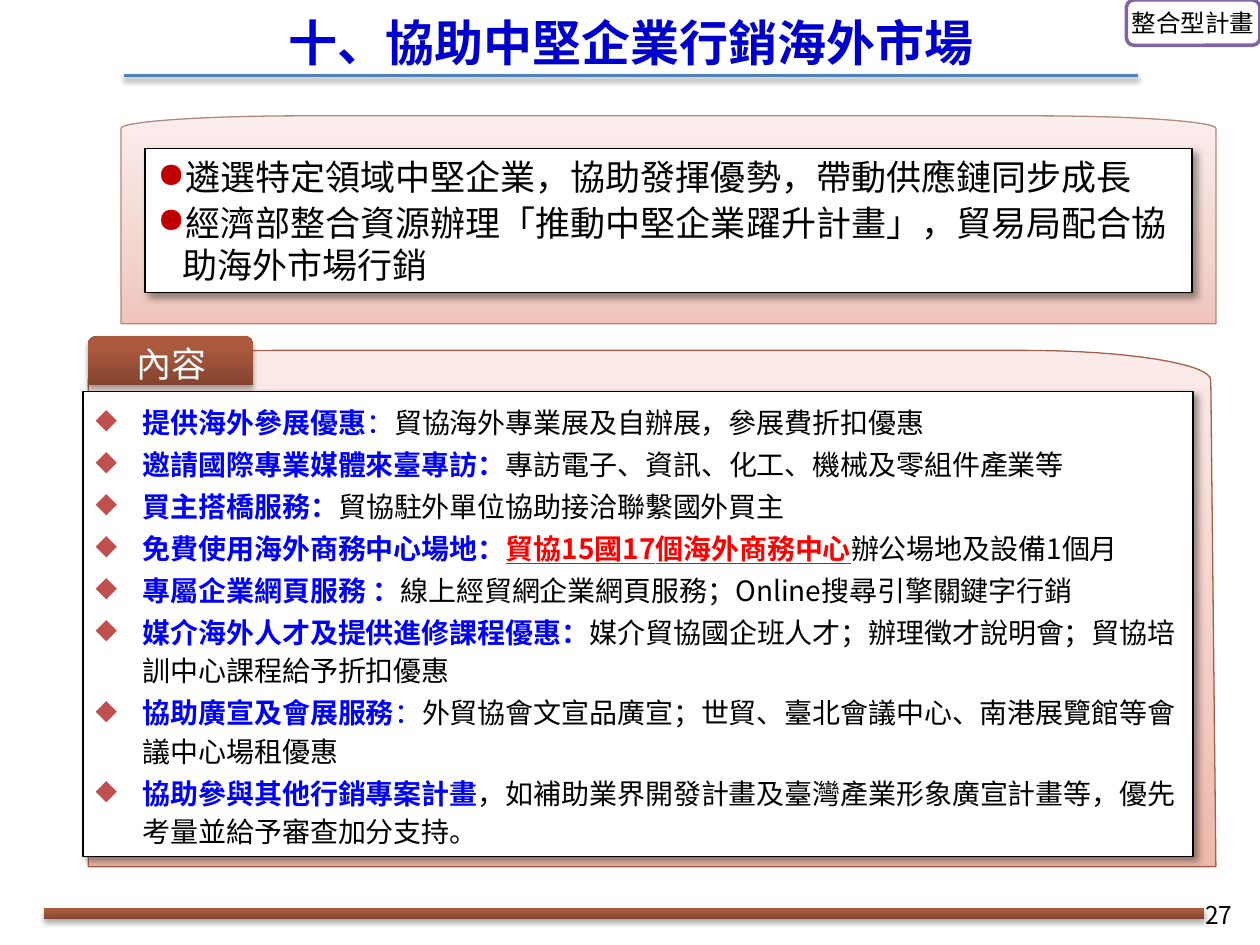
from typing import NamedTuple, Optional

from lxml.etree import SubElement
from pptx import Presentation
from pptx.dml.color import RGBColor
from pptx.enum.shapes import MSO_CONNECTOR, MSO_SHAPE
from pptx.enum.text import MSO_ANCHOR, PP_ALIGN
from pptx.oxml.ns import qn
from pptx.util import Pt

FONT = "Noto Sans CJK SC"
BLACK = RGBColor(0x00, 0x00, 0x00)
WHITE = RGBColor(0xFF, 0xFF, 0xFF)
BLUE = RGBColor(0x00, 0x00, 0xFF)
TITLE_BLUE = RGBColor(0x00, 0x00, 0xCC)
RULE_BLUE = RGBColor(0x4F, 0x81, 0xBD)
RED = RGBColor(0xFF, 0x00, 0x00)
DOT_RED = RGBColor(0xC0, 0x00, 0x00)
DIAMOND_RED = RGBColor(0xC0, 0x50, 0x4D)
PURPLE = RGBColor(0x80, 0x64, 0xA2)
CONTENT_EDGE = RGBColor(0xA3, 0x61, 0x4A)
SUMMARY_EDGE = RGBColor(0xB2, 0x87, 0x7C)

CONTENT_GRADIENT = ((0, "EEB8AC"), (35, "F2CDC5"), (100, "FBEBE8"))
SUMMARY_GRADIENT = ((0, "EFC5BB"), (35, "F3D5CF"), (100, "FBEEEC"))
TAB_GRADIENT = ((0, "83432E"), (80, "AC5A3F"), (100, "AF5A3D"))
BAR_GRADIENT = ((0, "854630"), (80, "AD5B3F"), (100, "AF5A3D"))


class Box(NamedTuple):
    left: float
    top: float
    width: float
    height: float

    def lengths(self) -> list:
        return [Pt(value) for value in self]


class Shadow(NamedTuple):
    opacity: int
    blur: float
    distance: float
    angle: int


class TextRun(NamedTuple):
    text: str
    color: RGBColor = BLACK
    bold: bool = False
    underline: bool = False


class ListStyle(NamedTuple):
    bullet: str
    bullet_color: RGBColor
    indent: float
    size: float
    line_spacing: Optional[float] = None


SOFT_SHADOW = Shadow(35, 3.1, 1.8, 90)
CARD_SHADOW = Shadow(40, 4, 3, 45)
SUMMARY_STYLE = ListStyle("●", DOT_RED, 14.4, 20)
CONTENT_STYLE = ListStyle("◆", DIAMOND_RED, 27, 16, 22)


def heading(text: str) -> TextRun:
    return TextRun(text, BLUE, bold=True)


SUMMARY = [
    [TextRun("遴選特定領域中堅企業，協助發揮優勢，帶動供應鏈同步成長")],
    [TextRun("經濟部整合資源辦理「推動中堅企業躍升計畫」，貿易局配合協助海外市場行銷")],
]
CONTENT = [
    [heading("提供海外參展優惠"), TextRun("：", BLUE), TextRun("貿協海外專業展及自辦展，參展費折扣優惠")],
    [heading("邀請國際專業媒體來臺專訪："), TextRun("專訪電子、資訊、化工、機械及零組件產業等")],
    [heading("買主搭橋服務："), TextRun("貿協駐外單位協助接洽聯繫國外買主")],
    [heading("免費使用海外商務中心場地："),
     TextRun("貿協15國17個海外商務中心", RED, True, True), TextRun("辦公場地及設備1個月")],
    [heading("專屬企業網頁服務 ："), TextRun("線上經貿網企業網頁服務；Online搜尋引擎關鍵字行銷")],
    [heading("媒介海外人才及提供進修課程優惠："),
     TextRun("媒介貿協國企班人才；辦理徵才說明會；貿協培訓中心課程給予折扣優惠")],
    [heading("協助廣宣及會展服務"), TextRun("：", BLUE),
     TextRun("外貿協會文宣品廣宣；世貿、臺北會議中心、南港展覽館等會議中心場租優惠")],
    [heading("協助參與其他行銷專案計畫"),
     TextRun("，如補助業界開發計畫及臺灣產業形象廣宣計畫等，優先考量並給予審查加分支持。")],
]


def set_font(paragraph, size: float) -> None:
    paragraph.font.size = Pt(size)
    paragraph.font.name = FONT
    SubElement(paragraph.font._element, qn("a:ea"), typeface=FONT)


def add_shadow(shape, shadow: Shadow) -> None:
    properties = shape._element.spPr
    effects = properties.find(qn("a:effectLst"))
    if effects is None:
        effects = SubElement(properties, qn("a:effectLst"))
    outer = SubElement(effects, qn("a:outerShdw"), blurRad=str(Pt(shadow.blur)),
                       dist=str(Pt(shadow.distance)), dir=str(shadow.angle * 60000),
                       algn="tl", rotWithShape="0")
    color = SubElement(outer, qn("a:srgbClr"), val=str(BLACK))
    SubElement(color, qn("a:alpha"), val=str(shadow.opacity * 1000))


def fill_gradient(shape, stops: tuple) -> None:
    """Fill from bottom to top with (percent, colour) stops."""
    shape.fill.gradient()
    shape.fill.gradient_angle = 90
    stop_list = next(shape._element.spPr.iter(qn("a:gsLst")))
    for stop in list(stop_list):
        stop_list.remove(stop)
    for percent, color in stops:
        stop = SubElement(stop_list, qn("a:gs"), pos=str(percent * 1000))
        SubElement(stop, qn("a:srgbClr"), val=color)


def set_line(shape, color: Optional[RGBColor], width: float = 0.75) -> None:
    if color is None:
        shape.line.fill.background()
    else:
        shape.line.color.rgb = color
        shape.line.width = Pt(width)


def quarter_curve(start: tuple, corner: tuple, end: tuple, steps: int = 16) -> list:
    """Points of an elliptical corner drawn as a cubic curve."""
    pull = 0.55
    controls = [tuple(a + (c - a) * pull for a, c in zip(point, corner)) for point in (start, end)]
    points = []
    for step in range(steps + 1):
        t = step / steps
        weights = ((1 - t) ** 3, 3 * t * (1 - t) ** 2, 3 * t * t * (1 - t), t ** 3)
        curve = (start, *controls, end)
        points.append(tuple(sum(w * p[axis] for w, p in zip(weights, curve)) for axis in (0, 1)))
    return points


def add_panel(slide, box: Box, radius_x: float, radius_y: float, stops: tuple,
              edge: Optional[RGBColor], flare: float = 0):
    """Panel with rounded top corners; flare widens its lower right corner."""
    left, top, width, height = box
    right, bottom = left + width - flare, top + height
    points = quarter_curve((left, top + radius_y), (left, top), (left + radius_x, top))
    points += quarter_curve((right - radius_x, top), (right, top), (right, top + radius_y))
    points += [(right + flare, bottom), (left, bottom)]
    start, *rest = [(Pt(x), Pt(y)) for x, y in points]
    builder = slide.shapes.build_freeform(*start)
    builder.add_line_segments(rest, close=True)
    panel = builder.convert_to_shape()
    fill_gradient(panel, stops)
    set_line(panel, edge)
    panel.shadow.inherit = False
    return panel


def add_box(slide, kind: MSO_SHAPE, box: Box, edge: RGBColor, width: float):
    shape = slide.shapes.add_shape(kind, *box.lengths())
    shape.fill.solid()
    shape.fill.fore_color.rgb = WHITE
    set_line(shape, edge, width)
    shape.shadow.inherit = False
    return shape


def write_line(shape, run: TextRun, size: float, alignment: PP_ALIGN, wrap: bool = True) -> None:
    shape.text_frame.word_wrap = wrap
    paragraph = shape.text_frame.paragraphs[0]
    paragraph.text = run.text
    paragraph.alignment = alignment
    set_font(paragraph, size)
    paragraph.font.bold = run.bold
    paragraph.runs[0].font.color.rgb = run.color


def add_label(slide, box: Box, run: TextRun, size: float, alignment=PP_ALIGN.CENTER) -> None:
    write_line(slide.shapes.add_textbox(*box.lengths()), run, size, alignment)


def add_list_card(slide, box: Box, items: list, style: ListStyle) -> None:
    card = add_box(slide, MSO_SHAPE.RECTANGLE, box, BLACK, 0.75)
    add_shadow(card, CARD_SHADOW)
    frame = card.text_frame
    frame.word_wrap = True
    frame.vertical_anchor = MSO_ANCHOR.MIDDLE
    for index, runs in enumerate(items):
        paragraph = frame.add_paragraph() if index else frame.paragraphs[0]
        paragraph.alignment = PP_ALIGN.LEFT
        paragraph.space_before = Pt(1 if index else 0)
        paragraph.space_after = Pt(1)
        if style.line_spacing:
            paragraph.line_spacing = Pt(style.line_spacing)
        properties = paragraph._p.get_or_add_pPr()
        properties.set("marL", str(Pt(style.indent)))
        properties.set("indent", str(-Pt(style.indent)))
        bullet_color = SubElement(properties, qn("a:buClr"))
        SubElement(bullet_color, qn("a:srgbClr"), val=str(style.bullet_color))
        SubElement(properties, qn("a:buChar"), char=style.bullet)
        set_font(paragraph, style.size)
        for item in runs:
            run = paragraph.add_run()
            run.text = item.text
            run.font.color.rgb = item.color
            run.font.bold = item.bold
            run.font.underline = item.underline


def main() -> None:
    presentation = Presentation()
    presentation.slide_width, presentation.slide_height = Pt(720), Pt(540)
    slide = presentation.slides.add_slide(presentation.slide_layouts[6])

    add_label(slide, Box(543.6, 510.5, 167.8, 37.4), TextRun("27"), 14, PP_ALIGN.RIGHT)
    add_panel(slide, Box(50.4, 200.2, 644.4, 295), 107, 17, CONTENT_GRADIENT, CONTENT_EDGE, flare=2.9)
    add_panel(slide, Box(69.1, 66.2, 625.7, 118.8), 104, 7.2, SUMMARY_GRADIENT, SUMMARY_EDGE)
    tab = add_panel(slide, Box(50.4, 192.2, 94.3, 28.1), 5, 4.3, TAB_GRADIENT, None)
    add_shadow(tab, SOFT_SHADOW)
    add_label(slide, Box(57.6, 192.2, 80.6, 31.7), TextRun("內容", WHITE), 20)

    bar = slide.shapes.add_shape(MSO_SHAPE.RECTANGLE, *Box(25.2, 519.1, 663.1, 5.8).lengths())
    fill_gradient(bar, BAR_GRADIENT)
    set_line(bar, None)
    bar.shadow.inherit = False
    add_shadow(bar, SOFT_SHADOW)

    add_list_card(slide, Box(82.8, 85, 598.3, 82.1), SUMMARY, SUMMARY_STYLE)
    add_list_card(slide, Box(47.5, 223.9, 634.3, 265.7), CONTENT, CONTENT_STYLE)

    tag = add_box(slide, MSO_SHAPE.FLOWCHART_ALTERNATE_PROCESS, Box(643.7, 0, 76.3, 25.9), PURPLE, 2)
    write_line(tag, TextRun("整合型計畫"), 14, PP_ALIGN.CENTER, wrap=False)
    add_label(slide, Box(110.9, 3.6, 499, 41), TextRun("十、協助中堅企業行銷海外市場", TITLE_BLUE, True), 28)

    rule = slide.shapes.add_connector(MSO_CONNECTOR.STRAIGHT, Pt(650.2), Pt(43.2), Pt(70.6), Pt(43.2))
    set_line(rule, RULE_BLUE, 1.75)
    add_shadow(rule, SOFT_SHADOW)

    presentation.save("out.pptx")


if __name__ == "__main__":
    main()
